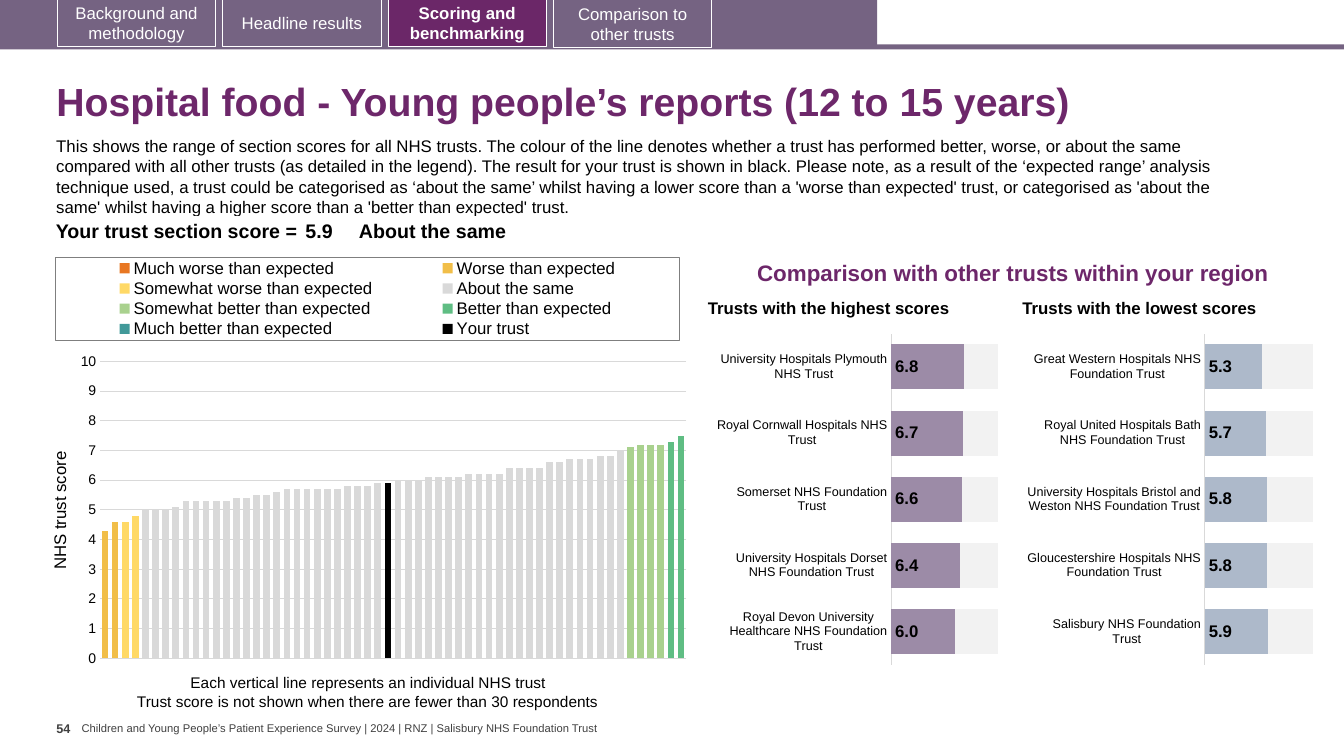
from copy import deepcopy
from pptx import Presentation
from pptx.chart.data import CategoryChartData
from pptx.dml.color import RGBColor
from pptx.enum.chart import XL_CHART_TYPE, XL_LABEL_POSITION, XL_LEGEND_POSITION, XL_TICK_MARK
from pptx.enum.shapes import MSO_SHAPE
from pptx.enum.text import MSO_ANCHOR, PP_ALIGN
from pptx.oxml import parse_xml
from pptx.oxml.ns import nsdecls
from pptx.util import Inches, Pt

PURPLE, BAND, GRID, BLACK, GREY = "6D276A", "756382", "D9D9D9", "000000", "404040"
FULL = (0.1, 0.05, 0.1, 0.05)
NONE = (0, 0, 0, 0)

INTRO = (
    "This shows the range of section scores for all NHS trusts. The colour of the line denotes "
    "whether a trust has performed better, worse, or about the same compared with all other "
    "trusts (as detailed in the legend). The result for your trust is shown in black. Please "
    "note, as a result of the ‘expected range’ analysis technique used, a trust could be "
    "categorised as ‘about the same’ whilst having a lower score than a 'worse than expected' "
    "trust, or categorised as 'about the same' whilst having a higher score than a 'better than "
    "expected' trust."
)
SCORES = [
    4.3, 4.6, 4.6, 4.8, 5, 5, 5, 5.1, 5.3, 5.3, 5.3, 5.3, 5.3, 5.4, 5.4, 5.5, 5.5, 5.6, 5.7, 5.7,
    5.7, 5.7, 5.7, 5.7, 5.8, 5.8, 5.8, 5.9, 5.9, 6, 6, 6, 6.1, 6.1, 6.1, 6.1, 6.2, 6.2, 6.2, 6.2,
    6.4, 6.4, 6.4, 6.4, 6.6, 6.6, 6.7, 6.7, 6.7, 6.8, 6.8, 7, 7.1, 7.2, 7.2, 7.2, 7.3, 7.5,
]
LEVELS = [
    ("Much worse than expected", "E87722", 0, 0),
    ("Worse than expected", "F1BE48", 0, 2),
    ("Somewhat worse than expected", "FFD966", 2, 4),
    ("About the same", GRID, 4, 52),
    ("Somewhat better than expected", "A9D18E", 52, 56),
    ("Better than expected", "5FBD83", 56, 58),
    ("Much better than expected", "419999", 0, 0),
    ("Your trust", BLACK, 28, 29),
]
HIGH = [
    ("University Hospitals Plymouth NHS Trust", 6.8),
    ("Royal Cornwall Hospitals NHS Trust", 6.7),
    ("Somerset NHS Foundation Trust", 6.6),
    ("University Hospitals Dorset NHS Foundation Trust", 6.4),
    ("Royal Devon University Healthcare NHS Foundation Trust", 6.0),
]
LOW = [
    ("Great Western Hospitals NHS Foundation Trust", 5.3),
    ("Royal United Hospitals Bath NHS Foundation Trust", 5.7),
    ("University Hospitals Bristol and Weston NHS Foundation Trust", 5.8),
    ("Gloucestershire Hospitals NHS Foundation Trust", 5.8),
    ("Salisbury NHS Foundation Trust", 5.9),
]


def rgb(code):
    return RGBColor.from_string(code)


class Deck:
    """Hold the style and the current slide, and draw each kind of element."""

    def __init__(self, wide, high):
        self.prs = Presentation()
        self.prs.slide_width, self.prs.slide_height = Inches(wide), Inches(high)
        self.slide = self.prs.slides.add_slide(self.prs.slide_layouts[5])
        self.face = "Arial"

    def font(self, font, size, color=BLACK, bold=False):
        font.name, font.size, font.bold = self.face, Pt(size), bold
        font.color.rgb = rgb(color)

    def fill(self, frame, words, size, color=BLACK, bold=False, align=PP_ALIGN.LEFT,
             anchor=MSO_ANCHOR.TOP, pad=FULL, wrap=True, space=None):
        frame.word_wrap, frame.vertical_anchor = wrap, anchor
        (frame.margin_left, frame.margin_top,
         frame.margin_right, frame.margin_bottom) = map(Inches, pad)
        line = frame.paragraphs[0]
        line.text, line.alignment, line.line_spacing = words, align, space
        self.font(line.font, size, color, bold)

    def title(self, box, words):
        shape = self.slide.shapes.title
        shape.left, shape.top, shape.width, shape.height = map(Inches, box)
        self.fill(shape.text_frame, words, 28, PURPLE, True, anchor=MSO_ANCHOR.MIDDLE, space=0.9)

    def text(self, box, words, size, **style):
        shape = self.slide.shapes.add_textbox(*map(Inches, box))
        self.fill(shape.text_frame, words, size, **style)

    def rect(self, box, color):
        shape = self.slide.shapes.add_shape(MSO_SHAPE.RECTANGLE, *map(Inches, box))
        shape.shadow.inherit = False
        shape.fill.solid()
        shape.fill.fore_color.rgb = rgb(color)
        shape.line.fill.background()
        return shape

    def tab(self, box, words, color, bold):
        shape = self.rect(box, color)
        shape.line.color.rgb = rgb("FFFFFF")
        shape.line.width = Pt(0.75)
        self.fill(shape.text_frame, words, 12, "FFFFFF", bold,
                  PP_ALIGN.CENTER, MSO_ANCHOR.MIDDLE)

    def table(self, box, widths, cells):
        table = self.slide.shapes.add_table(1, len(cells), *map(Inches, box)).table
        table.first_row = table.horz_banding = False
        for col, width in zip(table.columns, widths):
            col.width = Inches(width)
        for cell, (words, align, side) in zip(table.rows[0].cells, cells):
            cell.fill.background()
            cell.margin_left = cell.margin_right = Inches(side)
            cell.margin_top = cell.margin_bottom = Inches(0.04)
            line = cell.text_frame.paragraphs[0]
            line.text, line.alignment = words, align
            self.font(line.font, 14, bold=True)

    def place(self, node, index, box, inner=False):
        for old in node.xpath("./c:layout"):
            node.remove(old)
        kind = '<c:layoutTarget val="inner"/>' if inner else ""
        modes = "".join(f'<c:{n}Mode val="edge"/>' for n in "xy")
        sizes = "".join(f'<c:{n} val="{v}"/>' for n, v in zip("xywh", box))
        node.insert(index, parse_xml(
            f'<c:layout {nsdecls("c")}><c:manualLayout>{kind}{modes}{sizes}'
            '</c:manualLayout></c:layout>'))

    def chart(self, kind, box, names, series, gap, area):
        data = CategoryChartData(number_format="0.0")
        data.categories = names
        for name, color, values in series:
            data.add_series(name, values)
        chart = self.slide.shapes.add_chart(kind, *map(Inches, box), data).chart
        chart.has_title = chart.has_legend = False
        self.font(chart.font, 10)
        plot = chart.plots[0]
        plot.gap_width, plot.overlap, plot.vary_by_categories = gap, 100, False
        for item, (name, color, values) in zip(plot.series, series):
            item.format.fill.solid()
            item.format.fill.fore_color.rgb = rgb(color)
            item.invert_if_negative = False
        axis = chart.value_axis
        axis.minimum_scale, axis.maximum_scale = 0, 10
        axis.major_tick_mark = chart.category_axis.major_tick_mark = XL_TICK_MARK.NONE
        self.place(chart._chartSpace.chart.plotArea, 0, area, True)
        return chart

    def second(self, chart):
        area = chart._chartSpace.chart.plotArea
        bar, cat, val = (area.xpath(f"./c:{n}")[0] for n in ("barChart", "catAx", "valAx"))
        twin, side, right = map(deepcopy, (bar, cat, val))
        for old in twin.xpath("./c:ser")[:-1] + right.xpath("./c:majorGridlines | ./c:title"):
            old.getparent().remove(old)
        bar.remove(bar.xpath("./c:ser")[-1])
        ids = {cat.xpath("./c:axId/@val")[0]: "5001", val.xpath("./c:axId/@val")[0]: "5002"}
        for part in (twin, side, right):
            for node in part.xpath("./c:axId | ./c:crossAx"):
                node.set("val", ids[node.get("val")])
        right.xpath("./c:axPos")[0].set("val", "r")
        right.xpath("./c:crosses")[0].set("val", "max")
        right.xpath("./c:tickLblPos")[0].set("val", "none")
        bar.addnext(twin)
        val.addnext(right)
        right.addnext(side)

    def range(self, box):
        spots = range(len(SCORES))
        series = [(name, color, [SCORES[i] if a <= i < b else None for i in spots])
                  for name, color, a, b in LEVELS]
        chart = self.chart(XL_CHART_TYPE.COLUMN_CLUSTERED, box, [str(i + 1) for i in spots],
                           series, 50, (0.083, 0.265, 0.907, 0.7))
        chart.category_axis.visible = False
        axis = chart.value_axis
        axis.major_unit = 1
        axis.format.line.fill.background()
        axis.major_gridlines.format.line.color.rgb = rgb(GRID)
        axis.major_gridlines.format.line.width = Pt(0.75)
        axis.tick_labels.number_format = "0"
        axis.tick_labels.number_format_is_linked = False
        self.font(axis.tick_labels.font, 10)
        frame = axis.axis_title.text_frame
        frame.text = "NHS trust score"
        self.font(frame.paragraphs[0].font, 12)
        frame._txBody.bodyPr.set("rot", "-5400000")
        self.place(axis.axis_title._element, 1, (0, 0.47))
        self.second(chart)
        chart.has_legend = True
        legend = chart.legend
        legend.position, legend.include_in_layout = XL_LEGEND_POSITION.TOP, False
        self.font(legend.font, 12)
        self.place(legend._element, 1, (0.014, 0.019, 0.966, 0.196))
        legend._element.xpath("./c:txPr")[0].addprevious(parse_xml(
            f'<c:spPr {nsdecls("c", "a")}><a:ln w="9525"><a:solidFill>'
            '<a:srgbClr val="7F7F7F"/></a:solidFill></a:ln></c:spPr>'))

    def bars(self, box, trusts, color):
        names, values = zip(*trusts)
        series = [("Series 1", color, values),
                  ("Series 2", "F2F2F2", [round(10 - v, 1) for v in values])]
        chart = self.chart(XL_CHART_TYPE.BAR_STACKED, box, names, series, 47,
                           (0.608, 0.021, 0.371, 0.957))
        chart.value_axis.visible = False
        chart.value_axis.has_major_gridlines = False
        axis = chart.category_axis
        axis.reverse_order = True
        axis.format.line.color.rgb = rgb(GRID)
        axis.format.line.width = Pt(0.75)
        self.font(axis.tick_labels.font, 9)
        labels = chart.plots[0].series[0].data_labels
        labels.show_value, labels.position = True, XL_LABEL_POSITION.INSIDE_BASE
        labels.number_format, labels.number_format_is_linked = "0.0", False
        self.font(labels.font, 12, bold=True)


def main():
    deck = Deck(13.33, 7.5)
    deck.rect((0, 0.44, 13.33, 0.05), BAND)
    deck.rect((0, 0, 8.7, 0.47), BAND)
    tabs = ["Background and methodology", "Headline results",
            "Scoring and benchmarking", "Comparison to other trusts"]
    for i, words in enumerate(tabs):
        live = i == 2
        top = 0 if i == 3 else -0.01
        deck.tab((0.57 + 1.64 * i, top, 1.57, 0.47), words, "6B2768" if live else BAND, live)
    deck.title((0.46, 0.67, 12.49, 0.72), "Hospital food - Young people’s reports (12 to 15 years)")
    deck.text((0.46, 1.3, 12.13, 0.91), INTRO, 12)
    deck.table((0.36, 2.15, 11.69, 0.22), (2.63, 0.57, 8.49), [
        ("Your trust section score =", PP_ALIGN.RIGHT, 0.04),
        ("5.9", PP_ALIGN.LEFT, 0.04),
        ("About the same", PP_ALIGN.LEFT, 0)])
    deck.range((0.46, 2.47, 6.41, 4.21))
    deck.text((1.79, 6.63, 3.75, 0.29), "Each vertical line represents an individual NHS trust",
              11, wrap=False)
    deck.text((1.26, 6.82, 4.81, 0.29),
              "Trust score is not shown when there are fewer than 30 respondents", 11, wrap=False)
    head = dict(bold=True, anchor=MSO_ANCHOR.BOTTOM, pad=NONE, space=0.9)
    deck.text((7.51, 2.33, 5.47, 0.51), "Comparison with other trusts within your region",
              16, color=PURPLE, **head)
    deck.text((7.02, 2.93, 2.86, 0.23), "Trusts with the highest scores", 12, **head)
    deck.text((10.14, 2.93, 2.79, 0.23), "Trusts with the lowest scores", 12, **head)
    deck.bars((7.1, 3.24, 2.86, 3.43), HIGH, "9C8BA7")
    deck.bars((10.19, 3.24, 2.89, 3.43), LOW, "ADB9CA")
    deck.text((0.56, 7.1, 0.25, 0.4), "54", 9, color=GREY, bold=True,
              pad=(0, 0.05, 0, 0.05), wrap=False)
    deck.text((0.81, 7.16, 5.2, 0.13),
              "Children and Young People’s Patient Experience Survey | 2024 | RNZ | "
              "Salisbury NHS Foundation Trust", 8, color=GREY,
              anchor=MSO_ANCHOR.MIDDLE, pad=NONE, wrap=False)
    deck.prs.save("out.pptx")


if __name__ == "__main__":
    main()
